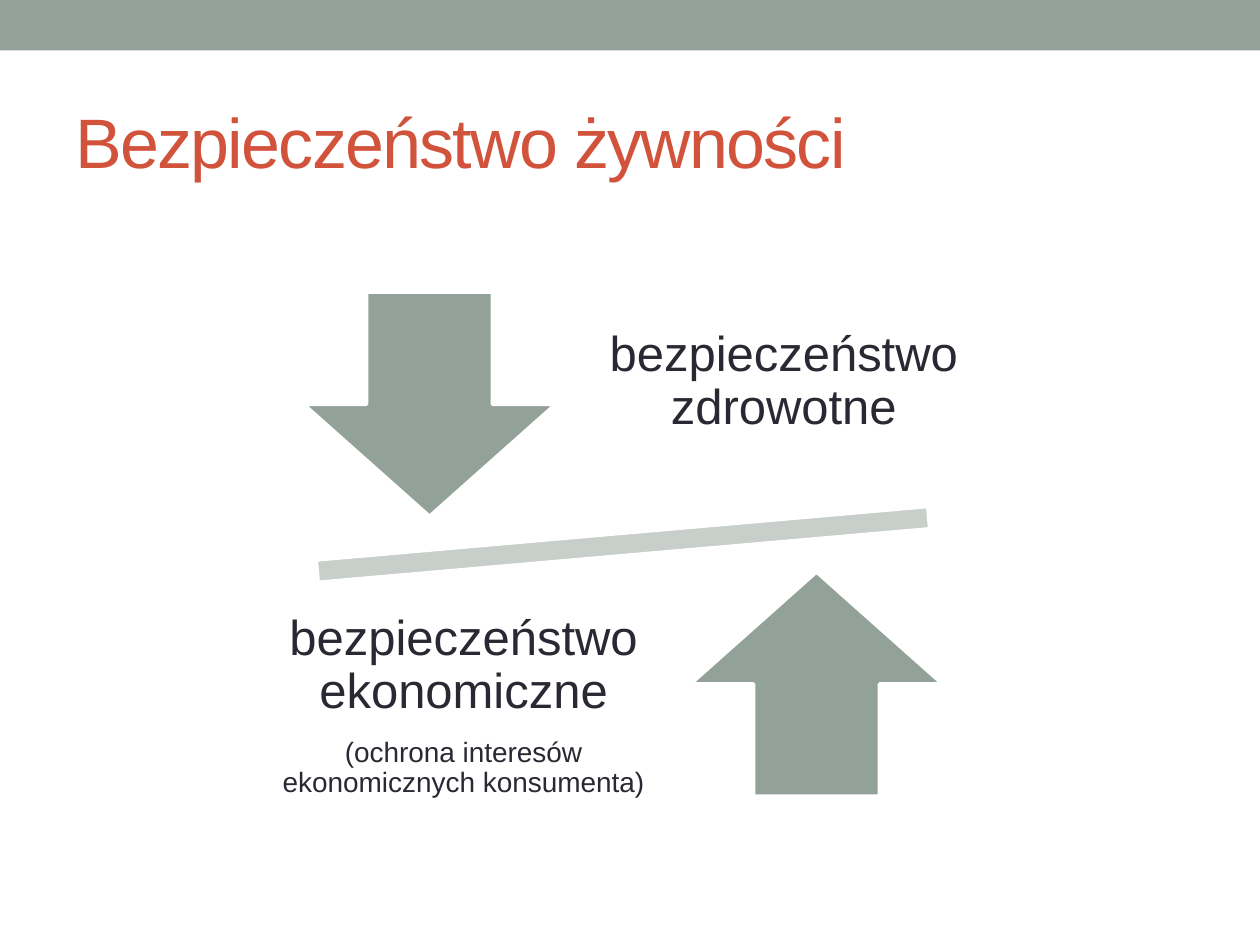
from pptx import Presentation
from pptx import util as u
from pptx.dml.color import RGBColor
from pptx.enum import shapes, text

SAGE, PALE, WHITE = "93A299", "C8CECA", "FFFFFF"
RED, DARK = "D2533C", "292934"
ARROW_SIZE = (5.08, 4.52)


def color(value):
    return RGBColor.from_string(value)


def add_figure(slide, kind, box, fill, outline=None, rotation=0):
    """Add a filled preset shape; box is left, top, width, height in cm."""
    shape = slide.shapes.add_shape(kind, *map(u.Cm, box))
    shape.shadow.inherit = False
    shape.rotation = rotation
    shape.fill.solid()
    shape.fill.fore_color.rgb = color(fill)
    if outline:
        shape.line.color.rgb = color(outline)
        shape.line.width = u.Pt(2.08)
    else:
        shape.line.fill.background()
    return shape


def add_text(slide, box, lines, font_color, inset=None, **paragraph_format):
    """Add a text box; each line is a (wording, size in points) pair."""
    shape = slide.shapes.add_textbox(*map(u.Cm, box))
    frame = shape.text_frame
    frame.word_wrap = True
    frame.vertical_anchor = text.MSO_ANCHOR.MIDDLE
    if inset is not None:
        for side in ("left", "top", "right", "bottom"):
            setattr(frame, f"margin_{side}", u.Cm(inset))
    for index, (wording, size) in enumerate(lines):
        paragraph = frame.add_paragraph() if index else frame.paragraphs[0]
        for name, value in paragraph_format.items():
            setattr(paragraph, name, value)
        if index:
            paragraph.space_before = u.Pt(11)
        run = paragraph.add_run()
        run.text = wording
        font_format = {"name": "Arial", "size": u.Pt(size)}
        for name, value in font_format.items():
            setattr(run.font, name, value)
        run.font.color.rgb = color(font_color)
    return shape


def add_title(slide, wording):
    shape = add_text(slide, (1.27, 1.47, 22.86, 2.74), [(wording, 40)], RED)
    # Letter spacing of -1 pt
    run = shape.text_frame.paragraphs[0].runs[0]
    run.font._element.set("spc", "-100")


def add_label(slide, box, lines):
    add_text(slide, box, lines, DARK, inset=0.56,
             alignment=text.PP_ALIGN.CENTER, line_spacing=0.9)


def main():
    presentation = Presentation()
    presentation.slide_width, presentation.slide_height = u.Cm(25.4), u.Cm(19.05)
    slide = presentation.slides.add_slide(presentation.slide_layouts[6])
    kinds = shapes.MSO_SHAPE

    # Top band and title
    add_figure(slide, kinds.RECTANGLE, (0, 0, 25.4, 1.02), SAGE)
    add_title(slide, "Bezpieczeństwo żywności")

    # Tilted balance beam
    add_figure(slide, kinds.MATH_MINUS, (4.14, 10.01, 16.84, 1.93), PALE, WHITE, 355)

    # Health side
    add_figure(slide, kinds.DOWN_ARROW, (6.12, 5.89, *ARROW_SIZE), SAGE, WHITE)
    add_label(slide, (11.28, 5.33, 9.04, 4.75), [("bezpieczeństwo zdrowotne", 28)])

    # Economic side
    add_figure(slide, kinds.UP_ARROW, (13.92, 11.53, *ARROW_SIZE), SAGE, WHITE)
    add_label(slide, (4.9, 11.86, 8.89, 4.75), [
        ("bezpieczeństwo ekonomiczne", 28),
        ("(ochrona interesów ekonomicznych konsumenta)", 16),
    ])

    presentation.save("out.pptx")


if __name__ == "__main__":
    main()
